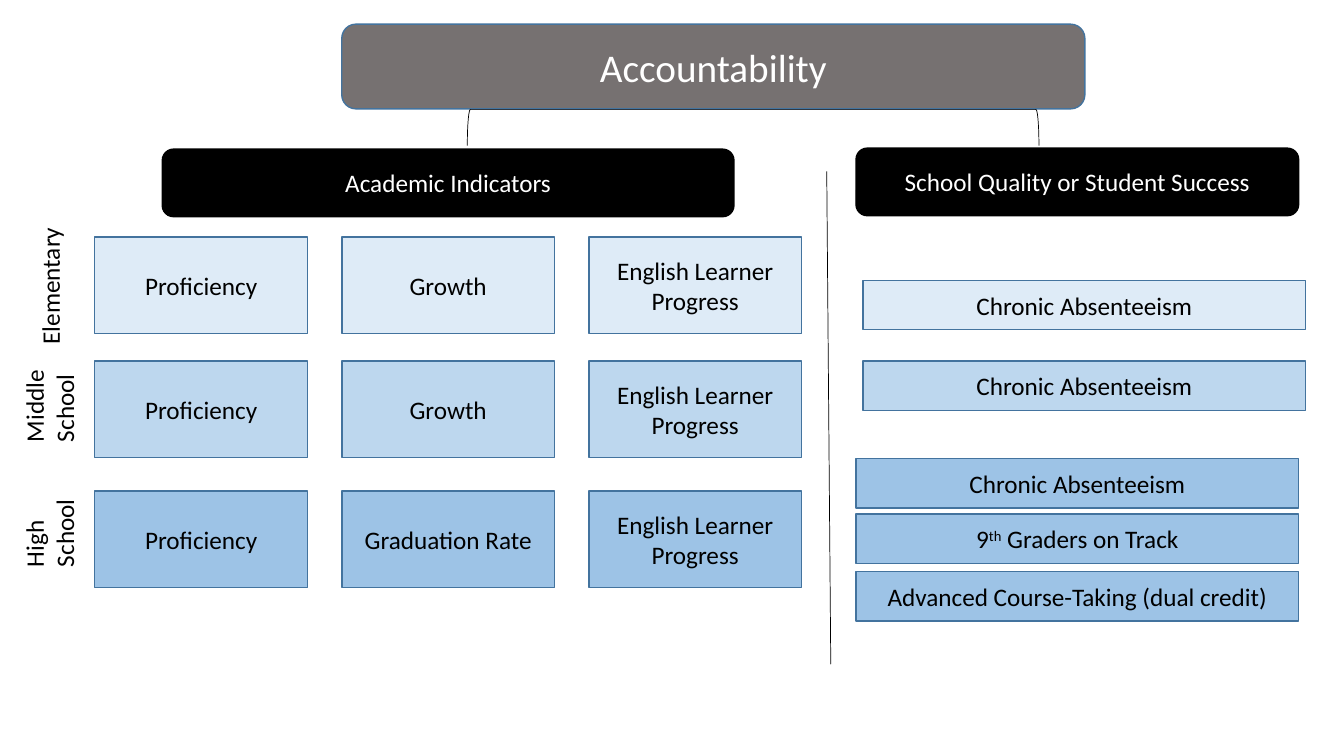
from lxml import etree
from pptx import Presentation, util as u
from pptx.dml.color import RGBColor
from pptx.enum import shapes, text
from pptx.oxml.ns import qn

BLACK = RGBColor(0x00, 0x00, 0x00)
WHITE = RGBColor(0xFF, 0xFF, 0xFF)
GRAY = RGBColor(0x76, 0x71, 0x71)
EDGE = RGBColor(0x43, 0x73, 0x9E)
PALE = RGBColor(0xDE, 0xEB, 0xF7)
LIGHT = RGBColor(0xBD, 0xD7, 0xEE)
MID = RGBColor(0x9D, 0xC3, 0xE6)
RECT = shapes.MSO_SHAPE.RECTANGLE
ROUND = shapes.MSO_SHAPE.ROUNDED_RECTANGLE

deck = Presentation()
deck.slide_width, deck.slide_height = u.Inches(13.33), u.Inches(7.5)
slide = deck.slides.add_slide(deck.slide_layouts[6])


def write(frame, words, color=BLACK, size=18):
    """Add runs to the first paragraph; '^' sets off a superscript."""
    frame.word_wrap = True
    para = frame.paragraphs[0]
    for i, part in enumerate(words.split("^")):
        run = para.add_run()
        run.text = part
        run.font.name, run.font.size = "Calibri", u.Pt(size)
        run.font.color.rgb = color
        if i % 2:
            run.font._element.set("baseline", "30000")
    return para


def box(kind, at, words, fill, edge=EDGE, color=BLACK, size=18):
    shape = slide.shapes.add_shape(kind, *map(u.Inches, at))
    shape.shadow.inherit = False
    shape.fill.solid()
    shape.fill.fore_color.rgb = fill
    shape.line.color.rgb = edge
    shape.line.width = u.Pt(1)
    shape.text_frame.vertical_anchor = text.MSO_ANCHOR.MIDDLE
    para = write(shape.text_frame, words, color, size)
    para.alignment = text.PP_ALIGN.CENTER


# Headings
box(ROUND, (3.39, 0.24, 7.37, 0.84), "Accountability", GRAY, color=WHITE, size=28)
box(ROUND, (1.61, 1.48, 5.67, 0.67), "Academic Indicators", BLACK, BLACK, WHITE)
box(ROUND, (8.49, 1.47, 4.39, 0.67), "School Quality or Student Success",
    BLACK, BLACK, WHITE)

# Academic grid: one row per school level
LEFT, STEP, WIDE, HIGH = 0.94, 2.45, 2.11, 0.96
levels = [
    (2.35, PALE, "Growth"),
    (3.58, LIGHT, "Growth"),
    (4.87, MID, "Graduation Rate"),
]
for top, fill, second in levels:
    for col, words in enumerate(("Proficiency", second, "English Learner Progress")):
        box(RECT, (LEFT + col * STEP, top, WIDE, HIGH), words, fill)

# School level labels
labels = [
    ("Elementary", -0.2, 2.62, 1.39, 0.4),
    ("Middle School", 0.01, 3.65, 0.96, 0.71),
    ("High School", 0.03, 4.91, 0.92, 0.71),
]
for words, *at in labels:
    label = slide.shapes.add_textbox(*map(u.Inches, at))
    label.rotation = 270
    write(label.text_frame, words)

# School quality bars
bars = [
    (8.56, 2.78, PALE, "Chronic Absenteeism"),
    (8.56, 3.58, LIGHT, "Chronic Absenteeism"),
    (8.49, 4.55, MID, "Chronic Absenteeism"),
    (8.49, 5.1, MID, "9^th^ Graders on Track"),
    (8.49, 5.67, MID, "Advanced Course-Taking (dual credit)"),
]
for left, top, fill, words in bars:
    box(RECT, (left, top, 4.39, 0.49), words, fill)

# Divider and the bracket under the title
rule = slide.shapes.add_connector(
    shapes.MSO_CONNECTOR.STRAIGHT, *map(u.Inches, (8.2, 1.7, 8.24, 6.59)))
etree.SubElement(rule._element.spPr, qn("a:effectLst"))
fork = slide.shapes.add_shape(
    shapes.MSO_SHAPE.RIGHT_BRACKET, *map(u.Inches, (7.29, -1.57, 0.36, 5.67)))
fork.rotation = 270
fork.shadow.inherit = False
fork.fill.background()
for stroke in (rule, fork):
    stroke.line.color.rgb = BLACK
    stroke.line.width = u.Pt(0.5)

deck.save("out.pptx")
